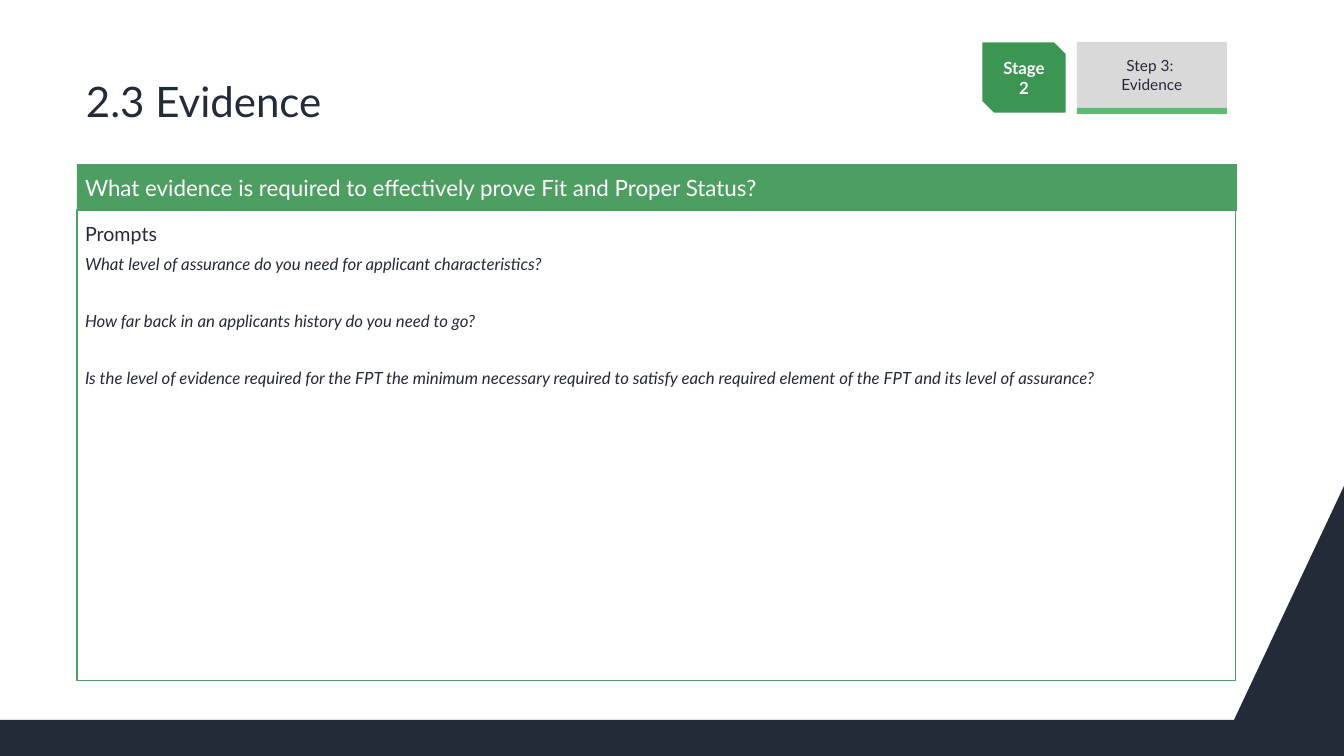
from dataclasses import dataclass

from lxml.etree import SubElement
from pptx import Presentation
from pptx.dml.color import RGBColor
from pptx.enum.shapes import MSO_SHAPE
from pptx.enum.text import MSO_ANCHOR, MSO_AUTO_SIZE, PP_ALIGN
from pptx.oxml.ns import qn
from pptx.util import Pt

PX = 12192000 / 1344
SLIDE_W, SLIDE_H = 1344, 756


def emu(px):
    return round(px * PX)


@dataclass(frozen=True)
class Theme:
    font: str = "Lato"
    navy: str = "232B39"
    green: str = "4C9E61"
    stage_green: str = "3C9653"
    step_green: str = "5BBD74"
    grey: str = "D9D9D9"
    white: str = "FFFFFF"
    title_size: float = 30
    header_size: float = 16
    prompt_size: float = 14
    question_size: float = 12
    stage_size: float = 12
    step_size: float = 11


class SlideBuilder:
    def __init__(self, slide, theme):
        self.slide = slide
        self.theme = theme

    def paint(self, shape, fill=None, line=None, line_width=0.75):
        if fill:
            shape.fill.solid()
            shape.fill.fore_color.rgb = RGBColor.from_string(fill)
        else:
            shape.fill.background()
        if line:
            shape.line.color.rgb = RGBColor.from_string(line)
            shape.line.width = Pt(line_width)
        else:
            shape.line.fill.background()

    def format_paragraph(self, paragraph, size, color, align=PP_ALIGN.LEFT,
                         before=0, bold=False, italic=False):
        paragraph.alignment = align
        paragraph.line_spacing = 1.0
        paragraph.space_before = Pt(before)
        for run in paragraph.runs:
            font = run.font
            font.name, font.size = self.theme.font, Pt(size)
            font.bold, font.italic = bold, italic
            font.color.rgb = RGBColor.from_string(color)

    def placeholder(self, idx, box, text, anchor=MSO_ANCHOR.MIDDLE, top_inset=5):
        """Move a template placeholder, fill it and strip its bullets."""
        holder = self.slide.placeholders[idx]
        holder.left, holder.top, holder.width, holder.height = map(emu, box)
        frame = holder.text_frame
        frame.text = text
        frame.word_wrap = True
        frame.auto_size = MSO_AUTO_SIZE.NONE
        frame.vertical_anchor = anchor
        frame.margin_left = frame.margin_right = emu(8)
        frame.margin_top, frame.margin_bottom = emu(top_inset), emu(5)
        for paragraph in frame.paragraphs:
            properties = paragraph._p.get_or_add_pPr()
            properties.set("marL", "0")
            properties.set("indent", "0")
            SubElement(properties, qn("a:buNone"))
        return holder

    def block(self, kind, box, fill, line=None, line_width=0.75):
        shape = self.slide.shapes.add_shape(kind, *map(emu, box))
        shape.shadow.inherit = False
        self.paint(shape, fill, line, line_width)
        return shape

    def label(self, shape, text, size, color, bold=False):
        frame = shape.text_frame
        frame.text = text
        frame.word_wrap = True
        frame.vertical_anchor = MSO_ANCHOR.MIDDLE
        self.format_paragraph(frame.paragraphs[0], size, color, PP_ALIGN.CENTER, bold=bold)

    def outline(self, points, fill):
        builder = self.slide.shapes.build_freeform(*points[0], scale=PX)
        builder.add_line_segments(points[1:], close=True)
        shape = builder.convert_to_shape()
        shape.shadow.inherit = False
        self.paint(shape, fill)


def main():
    deck = Presentation()
    deck.slide_width, deck.slide_height = emu(SLIDE_W), emu(SLIDE_H)
    two_content = deck.slide_layouts[3]
    theme = Theme()
    page = SlideBuilder(deck.slides.add_slide(two_content), theme)

    page.outline([(1234, 720), (0, 720), (0, SLIDE_H), (SLIDE_W, SLIDE_H), (SLIDE_W, 486)],
                 theme.navy)

    title = page.placeholder(0, (78, 50, 1159, 102), "2.3 Evidence")
    page.format_paragraph(title.text_frame.paragraphs[0], theme.title_size, theme.navy)

    questions = [
        "What level of assurance do you need for applicant characteristics?",
        "How far back in an applicants history do you need to go?",
        "Is the level of evidence required for the FPT the minimum necessary required "
        "to satisfy each required element of the FPT and its level of assurance?",
    ]
    prompts = page.placeholder(1, (77, 210, 1159, 471), "\n".join(["Prompts", *questions]),
                               MSO_ANCHOR.TOP, top_inset=12)
    page.paint(prompts, line=theme.green)
    heading, *question_lines = prompts.text_frame.paragraphs
    page.format_paragraph(heading, theme.prompt_size, theme.navy)
    for number, question in enumerate(question_lines):
        page.format_paragraph(question, theme.question_size, theme.navy,
                              before=26.4 if number else 6, italic=True)

    header = page.placeholder(2, (77, 164, 1160, 47),
                              "What evidence is required to effectively prove "
                              "Fit and Proper Status?")
    page.paint(header, theme.green)
    page.format_paragraph(header.text_frame.paragraphs[0], theme.header_size, theme.white)

    stage = page.block(MSO_SHAPE.SNIP_2_DIAG_RECTANGLE, (981, 41, 86, 73),
                       theme.stage_green, theme.white, 2)
    page.label(stage, "Stage 2", theme.stage_size, theme.white, bold=True)
    step = page.block(MSO_SHAPE.RECTANGLE, (1077, 42, 150, 66), theme.grey)
    page.label(step, "Step 3: \vEvidence", theme.step_size, theme.navy)
    page.block(MSO_SHAPE.RECTANGLE, (1077, 108, 150, 6), theme.step_green)

    deck.save("out.pptx")


if __name__ == "__main__":
    main()
